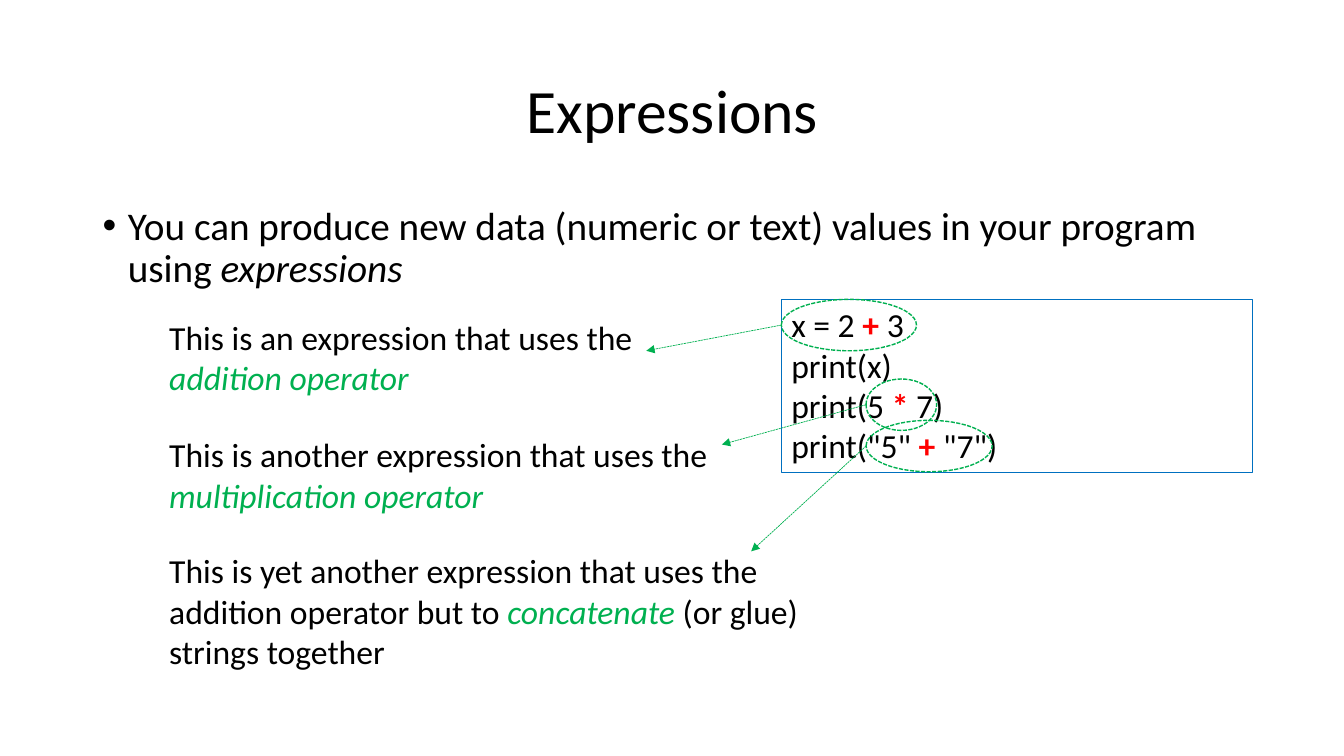
from dataclasses import dataclass

from lxml.etree import SubElement
from pptx import Presentation
from pptx.dml.color import RGBColor
from pptx.enum.dml import MSO_LINE
from pptx.enum.shapes import MSO_CONNECTOR, MSO_SHAPE
from pptx.enum.text import MSO_ANCHOR, PP_ALIGN
from pptx.oxml.ns import qn
from pptx.shapes.autoshape import Shape
from pptx.slide import Slide
from pptx.text.text import _Paragraph
from pptx.util import Inches, Pt

BLACK = RGBColor(0x00, 0x00, 0x00)
RED = RGBColor(0xFF, 0x00, 0x00)
GREEN = RGBColor(0x00, 0xB0, 0x50)
BLUE = RGBColor(0x00, 0x70, 0xC0)
FONT = "Calibri"
NOTE_LEFT = 1.58
OVAL_HEIGHT = 0.51


@dataclass(frozen=True)
class Piece:
    text: str
    color: RGBColor = BLACK
    bold: bool = False
    italic: bool = False


@dataclass(frozen=True)
class Note:
    """An explanation, the oval around its expression and the arrow's end."""
    top: float
    width: float
    height: float
    pieces: tuple[Piece, ...]
    oval_left: float
    oval_top: float
    oval_width: float
    arrow_end: tuple[float, float]


CODE = (
    (Piece("x = 2 "), Piece("+", RED, bold=True), Piece(" 3")),
    (Piece("print(x)"),),
    (Piece("print(5 "), Piece("*", RED, bold=True), Piece(" 7)")),
    (Piece('print("5" '), Piece("+", RED, bold=True), Piece(' "7")')),
)

NOTES = (
    Note(3.09, 4.91, 1.31,
         (Piece("This is an expression that uses the \n"),
          Piece("addition operator", GREEN, italic=True)),
         7.75, 2.97, 1.34, (6.41, 3.48)),
    Note(4.26, 5.67, 1.21,
         (Piece("This is another expression that uses the \n"),
          Piece("multiplication operator", GREEN, italic=True)),
         8.59, 3.76, 0.7, (7.16, 4.41)),
    Note(5.41, 6.67, 1.31,
         (Piece("This is yet another expression that uses the \n"
                "addition operator but to "),
          Piece("concatenate ", GREEN, italic=True),
          Piece("(or glue) \nstrings together")),
         8.59, 4.17, 1.25, (7.45, 5.47)),
)


def write(p: _Paragraph, pieces: tuple[Piece, ...], size: float) -> None:
    """Add the pieces as runs, with a line break at each newline."""
    for piece in pieces:
        for i, line in enumerate(piece.text.split("\n")):
            if i:
                p.add_line_break()
            if not line:
                continue
            r = p.add_run()
            r.text = line
            r.font.name = FONT
            r.font.size = Pt(size)
            r.font.color.rgb = piece.color
            r.font.bold = piece.bold
            r.font.italic = piece.italic


def add_text(s: Slide, left: float, top: float, width: float, height: float,
             pieces: tuple[Piece, ...], size: float) -> Shape:
    sp = s.shapes.add_textbox(Inches(left), Inches(top), Inches(width), Inches(height))
    sp.text_frame.word_wrap = True
    write(sp.text_frame.paragraphs[0], pieces, size)
    return sp


def add_outline(s: Slide, kind: MSO_SHAPE, left: float, top: float, width: float,
                height: float, color: RGBColor, weight: float) -> Shape:
    sp = s.shapes.add_shape(kind, Inches(left), Inches(top), Inches(width), Inches(height))
    sp.shadow.inherit = False
    sp.fill.background()
    sp.line.color.rgb = color
    sp.line.width = Pt(weight)
    return sp


def add_title(s: Slide) -> None:
    sp = add_text(s, 0.92, 0.4, 11.5, 1.45, (Piece("Expressions"),), 44)
    sp.text_frame.vertical_anchor = MSO_ANCHOR.MIDDLE
    p = sp.text_frame.paragraphs[0]
    p.alignment = PP_ALIGN.CENTER
    p.line_spacing = 0.9


def add_bullet(s: Slide) -> None:
    pieces = (
        Piece("You can produce new data (numeric or text) values in your program using "),
        Piece("expressions", italic=True),
    )
    sp = add_text(s, 0.92, 2, 11.5, 5.13, pieces, 28)
    p = sp.text_frame.paragraphs[0]
    p.line_spacing = 0.9
    p.space_before = Pt(10)
    pPr = p._p.get_or_add_pPr()
    pPr.set("marL", str(Inches(0.25)))
    pPr.set("indent", str(-Inches(0.25)))
    SubElement(pPr, qn("a:buFont"), typeface="Arial")
    SubElement(pPr, qn("a:buChar"), char="•")


def add_code(s: Slide) -> None:
    sp = add_outline(s, MSO_SHAPE.RECTANGLE, 7.75, 2.97, 4.67, 1.72, BLUE, 0.75)
    tf = sp.text_frame
    tf.word_wrap = True
    tf.vertical_anchor = MSO_ANCHOR.TOP
    for i, line in enumerate(CODE):
        p = tf.add_paragraph() if i else tf.paragraphs[0]
        p.alignment = PP_ALIGN.LEFT
        write(p, line, 24)


def add_arrow(s: Slide, start: tuple[float, float], end: tuple[float, float]) -> None:
    x1, y1, x2, y2 = (Inches(v) for v in start + end)
    arrow = s.shapes.add_connector(MSO_CONNECTOR.STRAIGHT, x1, y1, x2, y2)
    arrow.line.color.rgb = GREEN
    arrow.line.width = Pt(0.5)
    arrow.line.dash_style = MSO_LINE.SQUARE_DOT
    SubElement(arrow.line._get_or_add_ln(), qn("a:tailEnd"), type="triangle")
    SubElement(arrow._element.spPr, qn("a:effectLst"))


def add_note(s: Slide, note: Note) -> None:
    add_text(s, NOTE_LEFT, note.top, note.width, note.height, note.pieces, 24)
    add_arrow(s, (note.oval_left, note.oval_top + OVAL_HEIGHT / 2), note.arrow_end)
    oval = add_outline(s, MSO_SHAPE.OVAL, note.oval_left, note.oval_top,
                       note.oval_width, OVAL_HEIGHT, GREEN, 1)
    oval.line.dash_style = MSO_LINE.SQUARE_DOT


def main() -> None:
    prs = Presentation()
    prs.slide_width = Inches(13.33)
    prs.slide_height = Inches(7.5)
    s = prs.slides.add_slide(prs.slide_layouts[6])
    add_title(s)
    add_bullet(s)
    add_code(s)
    for note in NOTES:
        add_note(s, note)
    prs.save("out.pptx")


if __name__ == "__main__":
    main()
